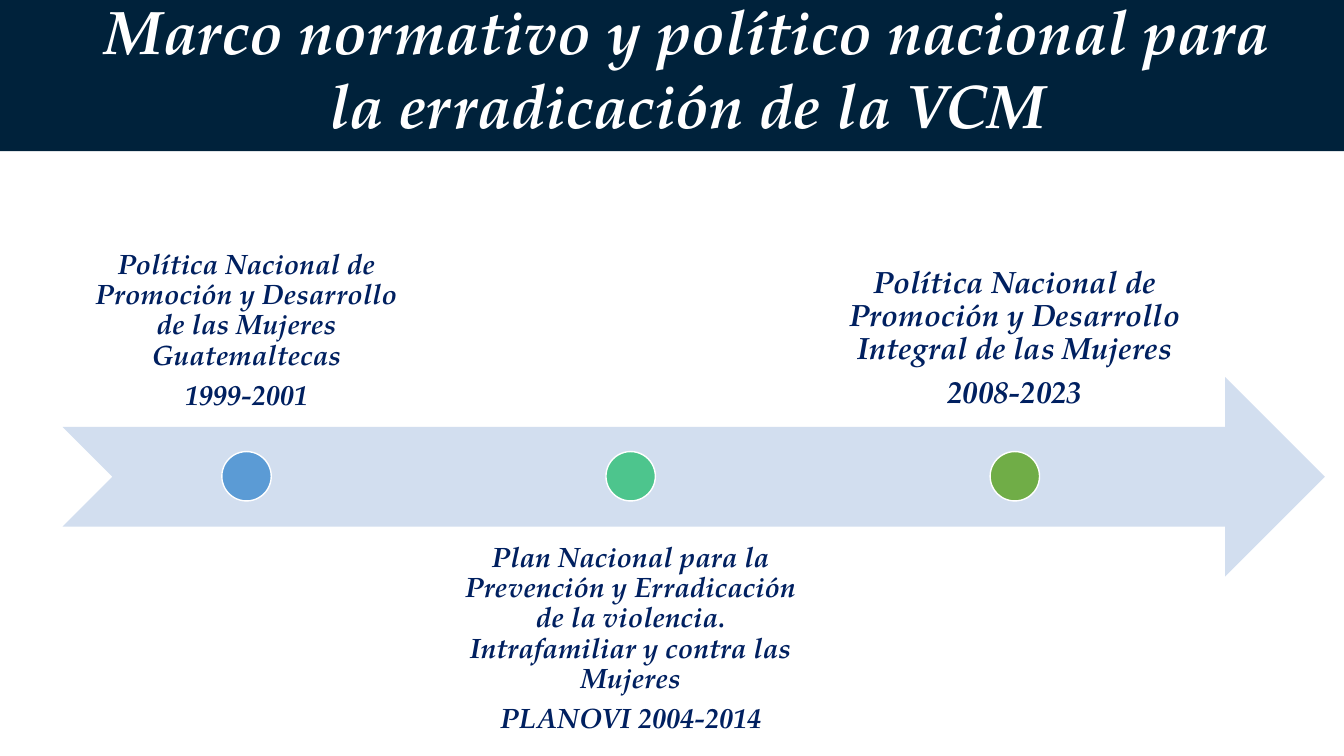
from dataclasses import dataclass

from pptx import Presentation
from pptx.dml.color import RGBColor
from pptx.enum.shapes import MSO_SHAPE
from pptx.enum.text import MSO_ANCHOR, MSO_AUTO_SIZE, PP_ALIGN
from pptx.util import Inches, Pt

RECTANGLE = MSO_SHAPE.RECTANGLE
NOTCHED_ARROW = MSO_SHAPE.NOTCHED_RIGHT_ARROW
OVAL = MSO_SHAPE.OVAL
TOP, MIDDLE, BOTTOM = MSO_ANCHOR.TOP, MSO_ANCHOR.MIDDLE, MSO_ANCHOR.BOTTOM
CENTER = PP_ALIGN.CENTER
NO_AUTOFIT = MSO_AUTO_SIZE.NONE


@dataclass(frozen=True)
class Theme:
    font: str = "TeX Gyre Pagella"
    banner: str = "00223B"
    arrow: str = "D2DEEF"
    white: str = "FFFFFF"
    label: str = "002060"
    title_size: int = 44


THEME = Theme()

# Timeline geometry, in inches
LABEL_LEFT, LABEL_STEP = 0.63, 3.81
LABEL_WIDTH, LABEL_HEIGHT = 3.63, 1.98
LABEL_TOP_ABOVE, LABEL_TOP_BELOW = 2.26, 5.23
DOT_TOP, DOT_SIZE = 4.48, 0.49

# Policy, period, dot colour, text size, inset
MILESTONES = [
    ("Política Nacional de Promoción y Desarrollo de las Mujeres Guatemaltecas",
     "1999-2001", "5B9BD5", 20, 0.16),
    ("Plan Nacional para la Prevención y Erradicación de la violencia. "
     "Intrafamiliar y contra las Mujeres",
     "PLANOVI 2004-2014", "4DC58D", 20, 0.16),
    ("Política Nacional de Promoción y Desarrollo Integral de las Mujeres",
     "2008-2023", "70AD47", 22, 0.17),
]


def add_filled_shape(slide, kind, left, top, width, height, fill, outline=None):
    shape = slide.shapes.add_shape(
        kind, Inches(left), Inches(top), Inches(width), Inches(height))
    shape.shadow.inherit = False
    shape.fill.solid()
    shape.fill.fore_color.rgb = RGBColor.from_string(fill)
    if outline:
        shape.line.color.rgb = RGBColor.from_string(outline)
        shape.line.width = Pt(1)
    else:
        shape.line.fill.background()


def format_paragraph(paragraph, size, color):
    paragraph.alignment = CENTER
    for run in paragraph.runs:
        run.font.name = THEME.font
        run.font.size = Pt(size)
        run.font.bold = True
        run.font.italic = True
        run.font.color.rgb = RGBColor.from_string(color)


def add_label(slide, left, top, anchor, lines, size, inset):
    box = slide.shapes.add_textbox(
        Inches(left), Inches(top), Inches(LABEL_WIDTH), Inches(LABEL_HEIGHT))
    frame = box.text_frame
    frame.word_wrap = True
    frame.vertical_anchor = anchor
    frame.margin_left = frame.margin_right = Inches(inset)
    frame.margin_top = frame.margin_bottom = Inches(inset)
    frame.text = "\n".join(lines)
    for paragraph in frame.paragraphs:
        format_paragraph(paragraph, size, THEME.label)
        paragraph.line_spacing = 0.9
        paragraph.space_after = Pt(0.35 * size)


def add_milestone(slide, index, policy, period, color, size, inset):
    left = LABEL_LEFT + index * LABEL_STEP
    # Labels alternate above and below the arrow
    above = index % 2 == 0
    top = LABEL_TOP_ABOVE if above else LABEL_TOP_BELOW
    add_label(slide, left, top, BOTTOM if above else TOP,
              (policy, period), size, inset)
    dot_left = left + (LABEL_WIDTH - DOT_SIZE) / 2
    add_filled_shape(slide, OVAL, dot_left, DOT_TOP, DOT_SIZE, DOT_SIZE,
                     color, THEME.white)


def place_title(slide, text):
    title = slide.shapes.title
    title.left, title.top = Inches(0.63), Inches(0.26)
    title.width, title.height = Inches(12.39), Inches(0.81)
    frame = title.text_frame
    frame.text = text
    frame.word_wrap = True
    frame.auto_size = NO_AUTOFIT
    frame.vertical_anchor = MIDDLE
    format_paragraph(frame.paragraphs[0], THEME.title_size, THEME.white)
    # Bring the title in front of the banner
    title.element.getparent().append(title.element)


def main():
    presentation = Presentation()
    presentation.slide_width = Inches(13.33)
    presentation.slide_height = Inches(7.5)
    slide = presentation.slides.add_slide(presentation.slide_layouts[5])

    # Timeline
    add_filled_shape(slide, NOTCHED_ARROW, 0.62, 3.74, 12.52, 1.98, THEME.arrow)
    for index, milestone in enumerate(MILESTONES):
        add_milestone(slide, index, *milestone)

    # Heading
    add_filled_shape(slide, RECTANGLE, 0, -0.02, 13.33, 1.52, THEME.banner)
    place_title(
        slide, "Marco normativo y político nacional para la erradicación de la VCM")

    presentation.save("out.pptx")


if __name__ == "__main__":
    main()
